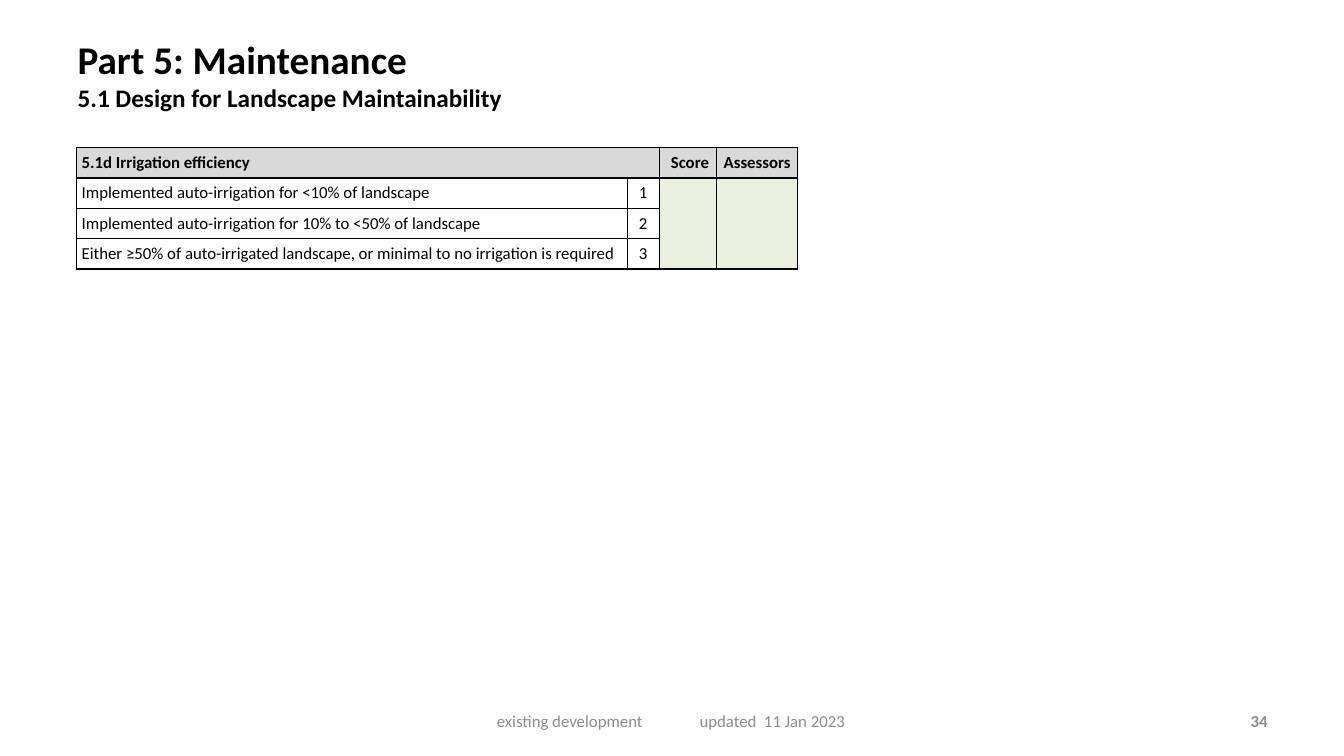
from pptx import Presentation
from pptx.dml.color import RGBColor
from pptx.enum.text import MSO_ANCHOR, PP_ALIGN
from pptx.oxml.xmlchemy import OxmlElement
from pptx.util import Inches, Pt

LEFT, CENTER, RIGHT = PP_ALIGN.LEFT, PP_ALIGN.CENTER, PP_ALIGN.RIGHT
TOP, MIDDLE = MSO_ANCHOR.TOP, MSO_ANCHOR.MIDDLE
WIDTH, HEIGHT = Inches(13.33), Inches(7.5)
FONT = "Calibri"
BODY_SIZE = 12
COLORS = {
    "ink": "000000",
    "muted": "8C8C8C",
    "header": "D9D9D9",
    "plain": "FFFFFF",
    "entry": "EBF1DE",
}

# Table content: criterion and its points
HEADER = ["5.1d Irrigation efficiency", "", " Score", "Assessors"]
CRITERIA = [
    "Implemented auto-irrigation for <10% of landscape",
    "Implemented auto-irrigation for 10% to <50% of landscape",
    "Either ≥50% of auto-irrigated landscape, or minimal to no irrigation is required",
]
COLUMN_SHARES = [40.96, 2.4, 4.28, 6]
ROW_SHARE = 4.02


def across(percent):
    return round(WIDTH * percent / 100)


def down(percent):
    return round(HEIGHT * percent / 100)


def write(para, text, size, color, bold=False, align=LEFT):
    para.text = text
    para.alignment = align
    for span in para.runs:
        span.font.name = FONT
        span.font.size = Pt(size)
        span.font.bold = bold
        span.font.color.rgb = RGBColor.from_string(COLORS[color])


def add_box(page, left, top, width, height, anchor=MIDDLE):
    box = page.shapes.add_textbox(across(left), down(top), across(width), down(height))
    box.text_frame.word_wrap = True
    box.text_frame.vertical_anchor = anchor
    return box.text_frame


def add_tab_stop(para, position):
    tabs = OxmlElement("a:tabLst")
    stop = OxmlElement("a:tab")
    stop.set("pos", str(position))
    stop.set("algn", "l")
    tabs.append(stop)
    para._p.get_or_add_pPr().append(tabs)


def set_borders(cell):
    properties = cell._tc.get_or_add_tcPr()
    for index, side in enumerate(("lnL", "lnR", "lnT", "lnB")):
        line = OxmlElement(f"a:{side}")
        line.set("w", str(Pt(1)))
        fill = OxmlElement("a:solidFill")
        color = OxmlElement("a:srgbClr")
        color.set("val", COLORS["ink"])
        fill.append(color)
        line.append(fill)
        properties.insert(index, line)


def fill_cell(cell, text, fill, bold, align):
    cell.fill.solid()
    cell.fill.fore_color.rgb = RGBColor.from_string(COLORS[fill])
    cell.vertical_anchor = MIDDLE
    cell.margin_left = cell.margin_right = Inches(0.05)
    cell.margin_top = cell.margin_bottom = Inches(0.05)
    para = cell.text_frame.paragraphs[0]
    write(para, text, BODY_SIZE, "ink", bold, align)
    if not text:
        # Keep empty cells from stretching their row
        end = OxmlElement("a:endParaRPr")
        end.set("sz", str(BODY_SIZE * 100))
        para._p.append(end)
    set_borders(cell)


def add_score_table(page, left, top):
    rows = [HEADER] + [[text, str(points), "", ""] for points, text in enumerate(CRITERIA, 1)]
    frame = page.shapes.add_table(
        len(rows), len(HEADER), across(left), down(top),
        across(sum(COLUMN_SHARES)), down(ROW_SHARE * len(rows)))
    table = frame.table
    for column, share in zip(table.columns, COLUMN_SHARES):
        column.width = across(share)
    for row_index, texts in enumerate(rows):
        table.rows[row_index].height = down(ROW_SHARE)
        is_header = row_index == 0
        for column_index, text in enumerate(texts):
            fill = "header" if is_header else "entry" if column_index > 1 else "plain"
            align = CENTER if column_index else LEFT
            fill_cell(table.cell(row_index, column_index), text, fill, is_header, align)
    # Header title spans two columns, entry fields span all criteria
    table.cell(0, 0).merge(table.cell(0, 1))
    for column_index in (2, 3):
        table.cell(1, column_index).merge(table.cell(len(CRITERIA), column_index))


def add_title(page):
    frame = add_box(page, 5.03, 4, 77.72, 13.2, TOP)
    write(frame.paragraphs[0], "Part 5: Maintenance", 28, "ink", True)
    write(frame.add_paragraph(), "5.1 Design for Landscape Maintainability", 18, "ink", True)


def add_footer(page):
    note = add_box(page, 36.23, 92.67, 29.63, 5.33).paragraphs[0]
    add_tab_stop(note, across(15.08))
    write(note, "existing development\tupdated  11 Jan 2023", BODY_SIZE, "muted")
    number = add_box(page, 71.72, 92.67, 23.33, 5.33).paragraphs[0]
    write(number, "34", BODY_SIZE, "muted", True, RIGHT)


def main():
    deck = Presentation()
    deck.slide_width, deck.slide_height = WIDTH, HEIGHT
    page = deck.slides.add_slide(deck.slide_layouts[6])
    add_title(page)
    add_score_table(page, 5.7, 19.53)
    add_footer(page)
    deck.save("out.pptx")


if __name__ == "__main__":
    main()
